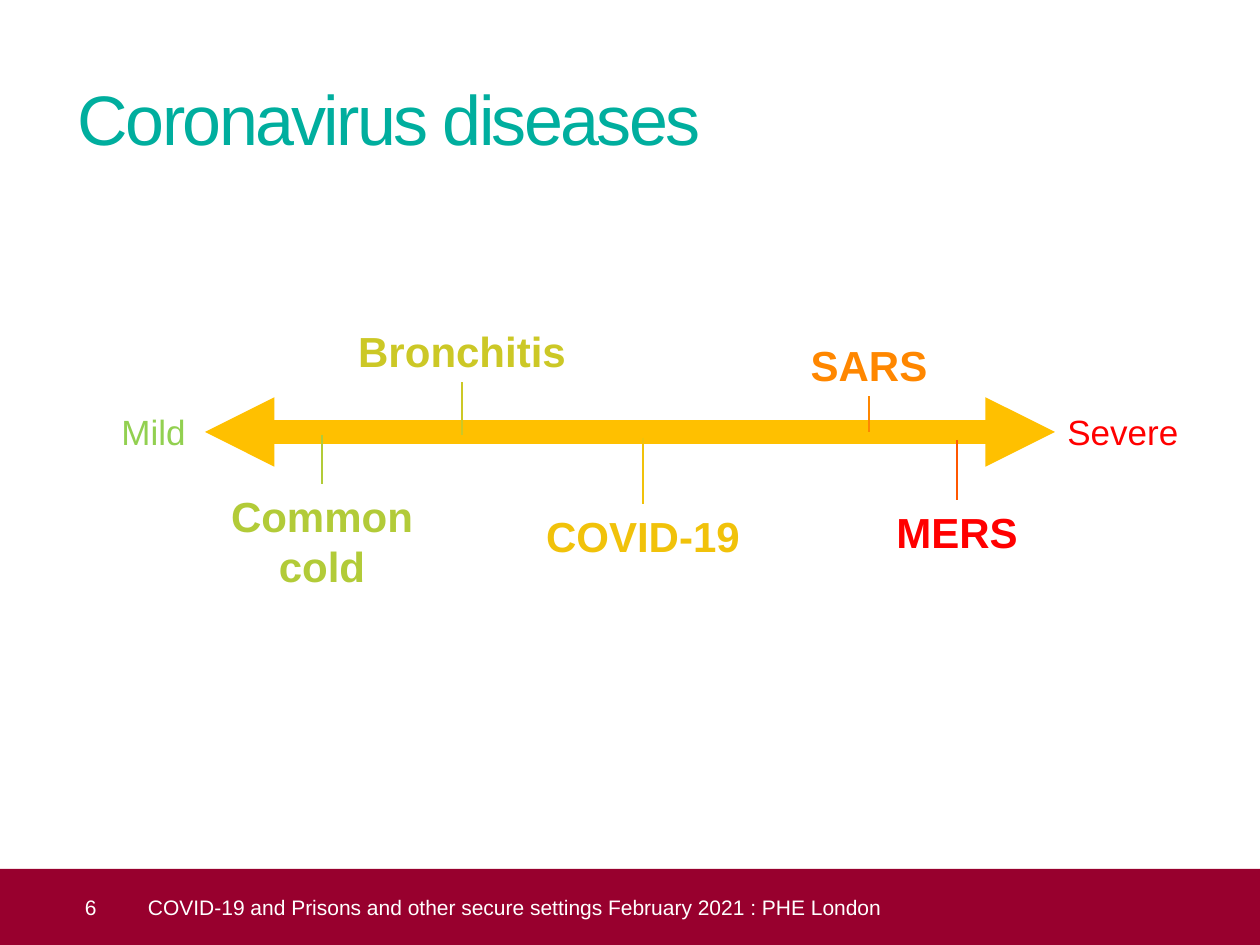
from pptx import Presentation
from pptx.dml.color import RGBColor
from pptx.enum.shapes import MSO_CONNECTOR, MSO_SHAPE
from pptx.enum.text import MSO_ANCHOR, MSO_AUTO_SIZE, PP_ALIGN
from pptx.oxml.ns import qn
from pptx.util import Pt
from lxml import etree

PX = 914400 // 126
LINE = MSO_CONNECTOR.STRAIGHT
RECT = MSO_SHAPE.RECTANGLE
MID, TOP = MSO_ANCHOR.MIDDLE, MSO_ANCHOR.TOP
GROW = MSO_AUTO_SIZE.SHAPE_TO_FIT_TEXT
LEFT, RIGHT, MIDDLE = PP_ALIGN.LEFT, PP_ALIGN.RIGHT, PP_ALIGN.CENTER
HUES = {
    "title": "00AE9E", "band": "98002E", "white": "FFFFFF", "axis": "FFC000",
    "mild": "92D050", "severe": "FF0000", "cold": "B2CB38", "bronch": "CCC826",
    "covid": "F1C20A", "sars": "FF8700", "mers": "FF5700",
}


def write(shape, text, size, hue, align=LEFT, bold=False, pad=None, anchor=TOP):
    frame = shape.text_frame
    frame.text = text
    frame.word_wrap = True
    frame.vertical_anchor = anchor
    if pad is None:
        frame.auto_size = GROW
    else:
        frame.margin_left = pad * PX
        frame.margin_top = frame.margin_right = frame.margin_bottom = 0
    para = frame.paragraphs[0]
    para.alignment = align
    font = para.runs[0].font
    font.name, font.size, font.bold = "Arial", Pt(size), bold
    font.color.rgb = RGBColor.from_string(HUES[hue])
    return shape


def draw(x1, y1, x2, y2, hue, width):
    line = slide.shapes.add_connector(LINE, x1 * PX, y1 * PX, x2 * PX, y2 * PX)
    line.line.color.rgb = RGBColor.from_string(HUES[hue])
    line.line.width = Pt(width)
    etree.SubElement(line._element.spPr, qn("a:effectLst"))
    return line


deck = Presentation()
deck.slide_width, deck.slide_height = 1260 * PX, 945 * PX
slide = deck.slides.add_slide(deck.slide_layouts[6])
shapes = slide.shapes

title = shapes.add_textbox(78 * PX, 76 * PX, 1106 * PX, 89 * PX)
write(title, "Coronavirus diseases", 40, "title", pad=0)
title.text_frame.paragraphs[0].runs[0].font._element.set("spc", "-150")

band = shapes.add_shape(RECT, 0, 869 * PX, 1260 * PX, 76 * PX)
band.shadow.inherit = False
band.fill.solid()
band.fill.fore_color.rgb = RGBColor.from_string(HUES["band"])
band.line.fill.background()
write(band, "6", 12, "white", pad=85, anchor=MID)

foot = shapes.add_textbox(124 * PX, 869 * PX, 1111 * PX, 76 * PX)
write(foot, "COVID-19 and Prisons and other secure settings February 2021 : PHE London",
      12, "white", pad=24, anchor=MID)

axis = draw(205, 432, 1055, 432, "axis", 13.25)
for end in ("a:headEnd", "a:tailEnd"):
    etree.SubElement(axis.line._get_or_add_ln(), qn(end), type="triangle")

for text, left, width, hue, align in (
    ("Mild", 64, 134, "mild", RIGHT),
    ("Severe", 1055, 205, "severe", LEFT),
):
    box = shapes.add_textbox(left * PX, 404 * PX, width * PX, 55 * PX)
    write(box, text, 20, hue, align)

WIDE = 248
for text, left, top, high, hue, tick, start, site in (
    ("Common cold", 198, 484, 115, "cold", "cold", 435, 0),
    ("Bronchitis", 338, 319, 63, "bronch", "bronch", 435, 2),
    ("COVID-19", 519, 504, 63, "covid", "covid", 438, 0),
    ("SARS", 745, 333, 63, "sars", "sars", 432, 2),
    ("MERS", 833, 500, 63, "severe", "mers", 440, 0),
):
    box = shapes.add_textbox(left * PX, top * PX, WIDE * PX, high * PX)
    write(box, text, 24, hue, MIDDLE, True)
    mid = left + WIDE // 2
    stem = draw(mid, start, mid, top + high * site // 2, tick, 1.5)
    stem.end_connect(box, site)

deck.save("out.pptx")
